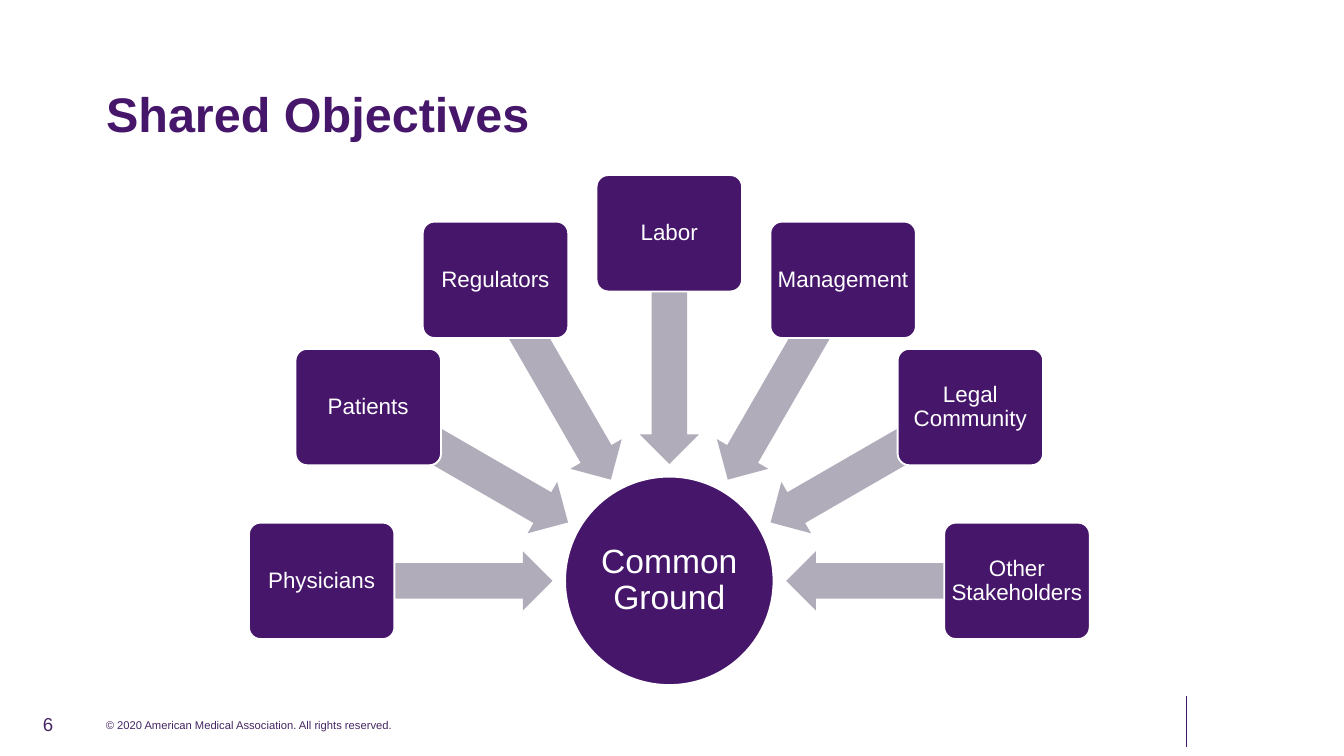
import math

from lxml import etree
from pptx import Presentation
from pptx.dml.color import RGBColor
from pptx.enum.shapes import MSO_CONNECTOR, MSO_SHAPE
from pptx.enum.text import MSO_ANCHOR, PP_ALIGN
from pptx.oxml.ns import qn
from pptx.util import Cm, Pt

PURPLE = RGBColor(0x46, 0x16, 0x6B)
FOOTER_PURPLE = RGBColor(0x45, 0x26, 0x63)
GRAY = RGBColor(0xB1, 0xAC, 0xBA)
WHITE = RGBColor(0xFF, 0xFF, 0xFF)
LEFT, CENTER = PP_ALIGN.LEFT, PP_ALIGN.CENTER
MIDDLE, TOP = MSO_ANCHOR.MIDDLE, MSO_ANCHOR.TOP
ELLIPSE = MSO_SHAPE.OVAL
ROUNDED = MSO_SHAPE.ROUNDED_RECTANGLE
LEFT_ARROW = MSO_SHAPE.LEFT_ARROW
STRAIGHT = MSO_CONNECTOR.STRAIGHT

# Geometry of the radial diagram, in centimetres
HUB_X, HUB_Y, HUB_SIZE = 12.65, 10.98, 3.94
BOX_RADIUS, BOX_WIDTH, BOX_HEIGHT = 6.57, 2.75, 2.2
ARROW_RADIUS, ARROW_LENGTH, ARROW_HEIGHT = 4.38, 4.34, 1.12
STEP = 30
STAKEHOLDERS = ["Physicians", "Patients", "Regulators", "Labor",
                "Management", "Legal Community", "Other Stakeholders"]


def add_centered_shape(kind, angle, radius, width, height, color):
    """Add a filled shape centred at an angle and distance from the hub."""
    x = HUB_X + radius * math.cos(math.radians(angle))
    y = HUB_Y + radius * math.sin(math.radians(angle))
    shape = slide.shapes.add_shape(kind, Cm(x - width / 2), Cm(y - height / 2),
                                   Cm(width), Cm(height))
    shape.shadow.inherit = False
    shape.fill.solid()
    shape.fill.fore_color.rgb = color
    return shape


def write_text(box, text, size, color, align, anchor, inset=None, bold=False):
    """Write one paragraph into a shape, with an optional equal inset."""
    frame = box.text_frame
    frame.word_wrap = True
    frame.vertical_anchor = anchor
    if inset is not None:
        frame.margin_left = frame.margin_right = Cm(inset)
        frame.margin_top = frame.margin_bottom = Cm(inset)
    para = frame.paragraphs[0]
    para.alignment = align
    span = para.add_run()
    span.text = text
    span.font.name = "Arial"
    span.font.size = Pt(size)
    span.font.bold = bold
    span.font.color.rgb = color
    return para


deck = Presentation()
deck.slide_width = Cm(25.4)
deck.slide_height = Cm(14.29)
slide = deck.slides.add_slide(deck.slide_layouts[5])

# Title
title = slide.shapes.title
title.left, title.top, title.width, title.height = Cm(1.75), Cm(0.76), Cm(21.9), Cm(2.77)
write_text(title, "Shared Objectives", 26, PURPLE, LEFT, MIDDLE, bold=True)

# Hub
hub = add_centered_shape(ELLIPSE, 0, 0, HUB_SIZE, HUB_SIZE, PURPLE)
hub.line.color.rgb = WHITE
hub.line.width = Pt(1)
write_text(hub, "Common Ground", 18, WHITE, CENTER, MIDDLE, 0.03).line_spacing = 0.9

# Stakeholders on a half circle, each with an arrow towards the hub
for index, name in enumerate(STAKEHOLDERS):
    angle = 180 + STEP * index
    arrow = add_centered_shape(LEFT_ARROW, angle, ARROW_RADIUS,
                               ARROW_LENGTH, ARROW_HEIGHT, GRAY)
    arrow.adjustments[0] = 0.6
    arrow.adjustments[1] = 0.5
    arrow.rotation = angle % 360
    arrow.line.fill.background()

    box = add_centered_shape(ROUNDED, angle, BOX_RADIUS, BOX_WIDTH, BOX_HEIGHT, PURPLE)
    box.adjustments[0] = 0.1
    box.line.color.rgb = WHITE
    box.line.width = Pt(1)
    write_text(box, name, 12, WHITE, CENTER, MIDDLE, 0.06).line_spacing = 0.9

# Footer: page number, copyright line and vertical rule
number_box = slide.shapes.add_textbox(Cm(0.56), Cm(13.31), Cm(2.57), Cm(0.76))
write_text(number_box, "6", 10, FOOTER_PURPLE, LEFT, MIDDLE)
copyright_box = slide.shapes.add_textbox(Cm(1.75), Cm(13.46), Cm(7.01), Cm(0.5))
write_text(copyright_box, "© 2020 American Medical Association. All rights reserved.",
           6, FOOTER_PURPLE, LEFT, TOP)
rule = slide.shapes.add_connector(STRAIGHT, Cm(22.43), Cm(13.16), Cm(22.43), Cm(14.12))
rule.line.color.rgb = PURPLE
rule.line.width = Pt(0.5)
etree.SubElement(rule._element.spPr, qn("a:effectLst"))

deck.save("out.pptx")
